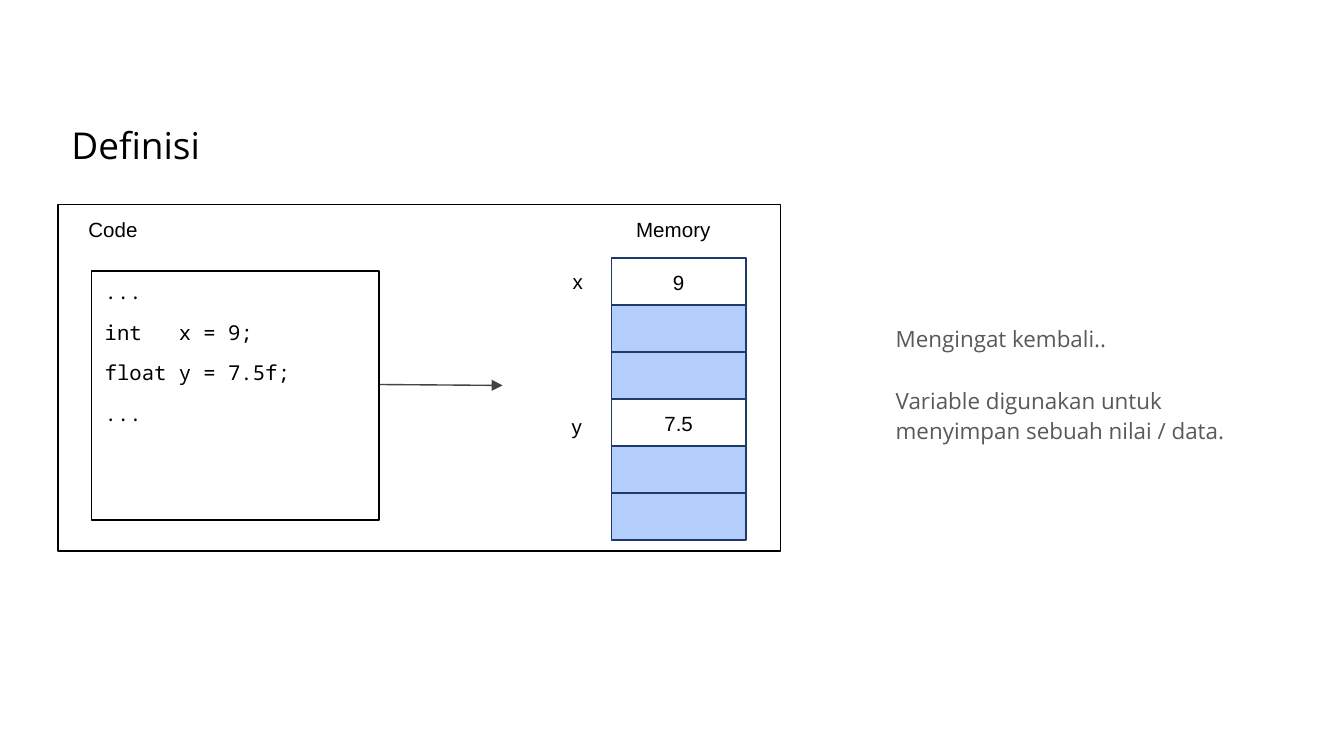
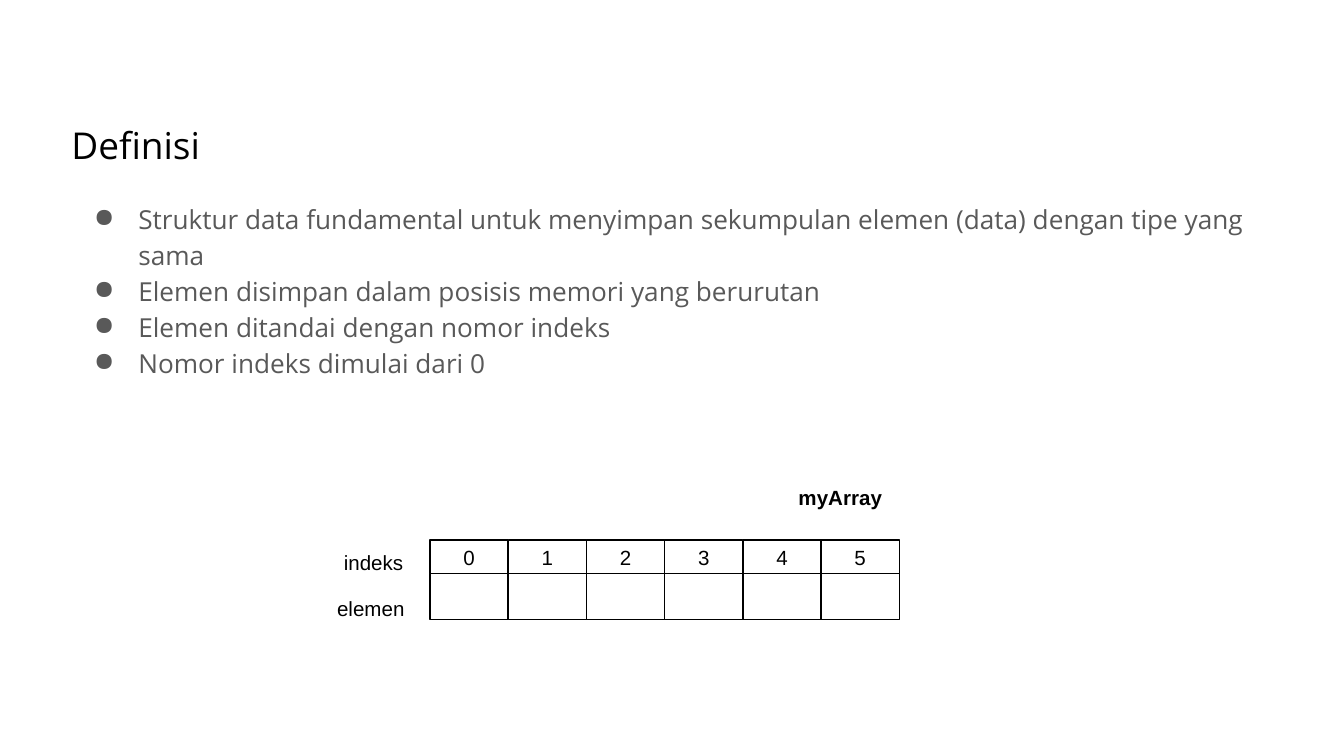
from dataclasses import dataclass

from lxml.etree import SubElement
from pptx import Presentation
from pptx.dml.color import RGBColor
from pptx.enum.shapes import MSO_CONNECTOR, MSO_SHAPE
from pptx.enum.text import MSO_ANCHOR, MSO_AUTO_SIZE, PP_ALIGN
from pptx.oxml.ns import qn
from pptx.presentation import Presentation as Deck
from pptx.shapes.autoshape import Shape
from pptx.shapes.shapetree import GroupShapes, SlideShapes
from pptx.slide import Slide
from pptx.text.text import TextFrame
from pptx.util import Pt

# Shared style
COLORS = {
    "black": "000000",
    "white": "FFFFFF",
    "body": "595959",
    "arrow": "434343",
    "memory_line": "1D3A6B",
    "memory_free": "B3CEFB",
}
HEADING_FONT = "Open Sans"
LABEL_FONT = "Arial"
CODE_FONT = "Noto Sans Mono"
LINE_WIDTH = 0.75
TITLE_ONLY = 5

ShapeTree = SlideShapes | GroupShapes


@dataclass(frozen=True)
class Area:
    """A rectangle measured in points."""

    left: float
    top: float
    width: float
    height: float

    def lengths(self) -> tuple[Pt, Pt, Pt, Pt]:
        return Pt(self.left), Pt(self.top), Pt(self.width), Pt(self.height)


@dataclass(frozen=True)
class Label:
    text: str
    area: Area
    align: PP_ALIGN = PP_ALIGN.CENTER
    bold: bool = False


TITLE_AREA = Area(31, 58.3, 658, 31)


def rgb(name: str) -> RGBColor:
    return RGBColor.from_string(COLORS[name])


def write_text(frame: TextFrame, text: str, *, font: str = LABEL_FONT, size: float = 11,
               color: str = "black", bold: bool = False,
               align: PP_ALIGN = PP_ALIGN.LEFT, anchor: MSO_ANCHOR = MSO_ANCHOR.TOP,
               line_spacing: float = 1.06, before: float = 0, after: float = 0,
               margin: float = 0, indent: float = 0, bullet: str = "",
               inset: float = 3.6) -> None:
    """Fill a frame with one paragraph for each line of text."""
    frame.word_wrap = True
    frame.auto_size = MSO_AUTO_SIZE.NONE
    frame.vertical_anchor = anchor
    frame.margin_left = frame.margin_right = Pt(7.2)
    frame.margin_top = frame.margin_bottom = Pt(inset)
    for number, line in enumerate(text.split("\n")):
        paragraph = frame.add_paragraph() if number else frame.paragraphs[0]
        paragraph.alignment = align
        paragraph.line_spacing = line_spacing
        paragraph.space_before = Pt(before if number else 0)
        paragraph.space_after = Pt(after)
        properties = paragraph._p.get_or_add_pPr()
        properties.set("marL", str(Pt(margin)))
        properties.set("indent", str(Pt(indent)))
        if bullet:
            bullet_color = SubElement(properties, qn("a:buClr"))
            SubElement(bullet_color, qn("a:srgbClr")).set("val", COLORS[color])
            SubElement(properties, qn("a:buChar")).set("char", bullet)
        run = paragraph.add_run()
        run.text = line
        run.font.name = font
        run.font.size = Pt(size)
        run.font.bold = bold
        run.font.color.rgb = rgb(color)


def add_titled_slide(deck: Deck, title: str) -> Slide:
    slide = deck.slides.add_slide(deck.slide_layouts[TITLE_ONLY])
    heading = slide.shapes.title
    heading.left, heading.top, heading.width, heading.height = TITLE_AREA.lengths()
    write_text(heading.text_frame, title, font=HEADING_FONT, size=19.8,
               line_spacing=1, inset=7.2)
    return slide


def add_body(shapes: ShapeTree, area: Area, text: str, *, size: float, margin: float,
             indent: float = 0, bullet: str = "", before: float = 0) -> None:
    body = shapes.add_textbox(*area.lengths())
    write_text(body.text_frame, text, font=HEADING_FONT, size=size, color="body",
               line_spacing=1.15, margin=margin, indent=indent, bullet=bullet,
               before=before, inset=7.2)


def add_box(shapes: ShapeTree, area: Area, fill: str = "white", line: str = "black") -> Shape:
    box = shapes.add_shape(MSO_SHAPE.RECTANGLE, *area.lengths())
    box.shadow.inherit = False
    box.fill.solid()
    box.fill.fore_color.rgb = rgb(fill)
    box.line.color.rgb = rgb(line)
    box.line.width = Pt(LINE_WIDTH)
    return box


def add_cell(shapes: ShapeTree, area: Area, value: str = "", fill: str = "white",
             line: str = "black") -> None:
    cell = add_box(shapes, area, fill, line)
    if value:
        write_text(cell.text_frame, value, align=PP_ALIGN.CENTER,
                   anchor=MSO_ANCHOR.MIDDLE, after=8)


def add_label(shapes: ShapeTree, label: Label) -> None:
    caption = shapes.add_textbox(*label.area.lengths())
    write_text(caption.text_frame, label.text, bold=label.bold, align=label.align,
               anchor=MSO_ANCHOR.MIDDLE, after=8)


def add_arrow(shapes: ShapeTree, start: tuple[float, float], end: tuple[float, float]) -> None:
    arrow = shapes.add_connector(MSO_CONNECTOR.STRAIGHT, *map(Pt, start + end))
    arrow.line.color.rgb = rgb("arrow")
    arrow.line.width = Pt(LINE_WIDTH)
    SubElement(arrow.line._get_or_add_ln(), qn("a:tailEnd")).set("type", "triangle")
    SubElement(arrow._element.spPr, qn("a:effectLst"))


def build_variable_slide(deck: Deck) -> None:
    shapes = add_titled_slide(deck, "Definisi").shapes
    add_body(shapes, Area(460.8, 165, 228.2, 84),
             "Mengingat kembali..\nVariable digunakan untuk menyimpan sebuah nilai / data.",
             size=12, margin=12, before=16.2)

    # Diagram frame and memory column
    add_box(shapes, Area(31, 109.7, 387, 185.5))
    cell_height = 25.2
    for row, value in enumerate(["9", "", "", "7.5", "", ""]):
        add_cell(shapes, Area(327.6, 138.2 + row * cell_height, 72, cell_height), value,
                 fill="white" if value else "memory_free", line="memory_line")

    # Code listing
    listing = add_box(shapes, Area(49, 145.2, 154, 133.4))
    write_text(listing.text_frame, "...\nint   x = 9;\nfloat y = 7.5f;\n...",
               font=CODE_FONT, line_spacing=1.05, after=8)

    # Variable names and headings
    for label in (
        Label("x", Area(291.6, 137.5, 36, 25.2)),
        Label("y", Area(291, 215.3, 36, 25.2)),
        Label("Code", Area(31, 109.7, 59, 25.2)),
        Label("Memory", Area(331.2, 109.7, 59, 25.2)),
    ):
        add_label(shapes, label)
    add_arrow(shapes, (203.5, 206), (269.3, 206.5))


def build_array_slide(deck: Deck) -> None:
    slide = add_titled_slide(deck, "Definisi")
    add_body(slide.shapes, Area(31, 99.4, 658, 141.8),
             "Struktur data fundamental untuk menyimpan sekumpulan elemen (data) "
             "dengan tipe yang sama\n"
             "Elemen disimpan dalam posisis memori yang berurutan\n"
             "Elemen ditandai dengan nomor indeks\n"
             "Nomor indeks dimulai dari 0",
             size=14, margin=36, indent=-23.8, bullet="●")

    # Array: an index row above an element row
    array = slide.shapes.add_group_shape().shapes
    cell_width, index_top, index_height, element_height = 41.9, 289.4, 18, 24.5
    for index in range(6):
        left = 230.4 + index * cell_width
        add_cell(array, Area(left, index_top, cell_width, index_height), str(index))
        add_cell(array, Area(left, index_top + index_height, cell_width, element_height))

    # Array labels
    for label in (
        Label("indeks", Area(168.5, 290.2, 54.7, 20.9), PP_ALIGN.RIGHT),
        Label("elemen", Area(168.5, 313.2, 55.4, 24.5), PP_ALIGN.RIGHT),
        Label("myArray", Area(416.2, 255.6, 63.4, 20.9), PP_ALIGN.RIGHT, bold=True),
    ):
        add_label(array, label)


def main() -> None:
    deck = Presentation()
    deck.slide_width, deck.slide_height = Pt(720), Pt(405)
    build_variable_slide(deck)
    build_array_slide(deck)
    deck.save("out.pptx")


if __name__ == "__main__":
    main()
